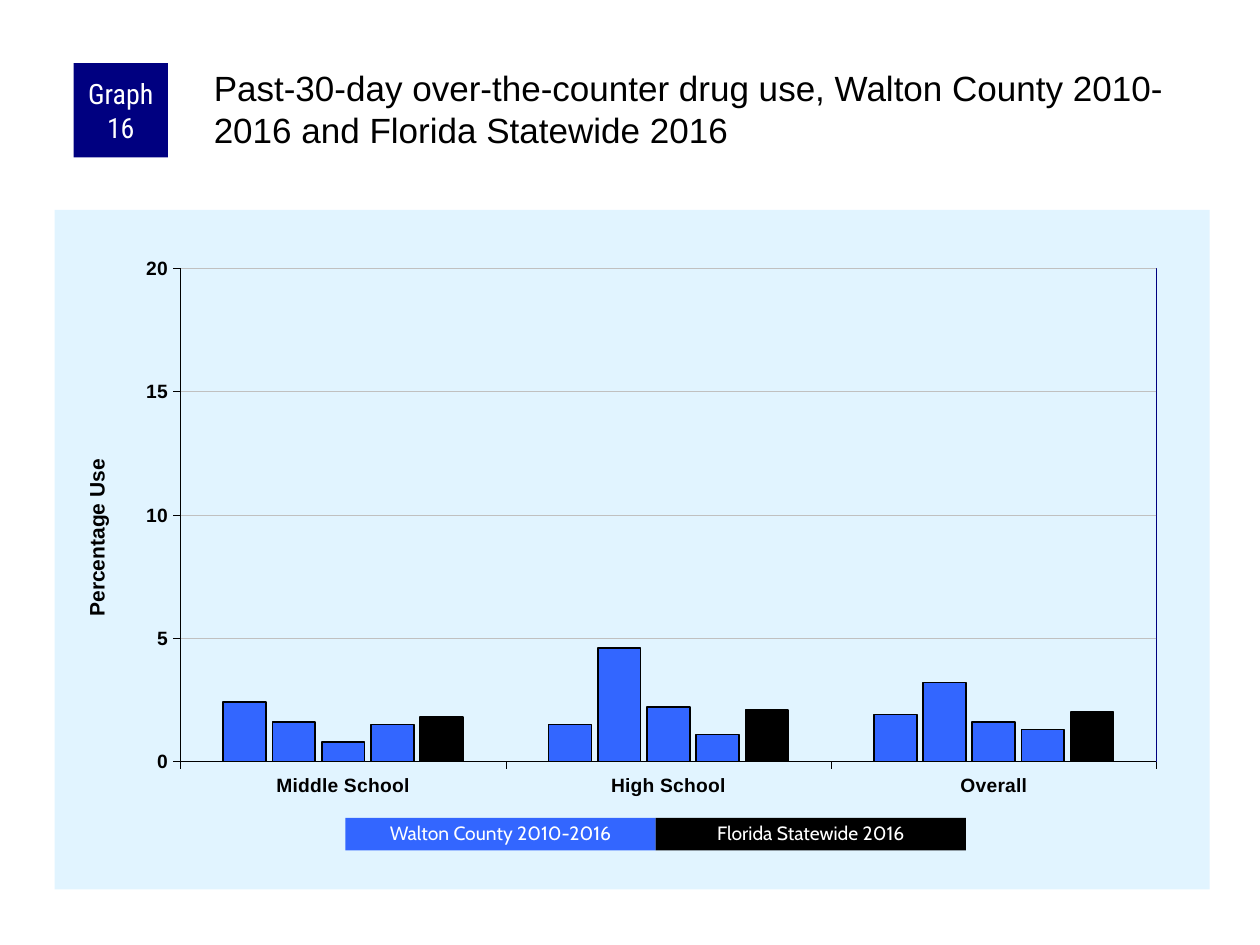
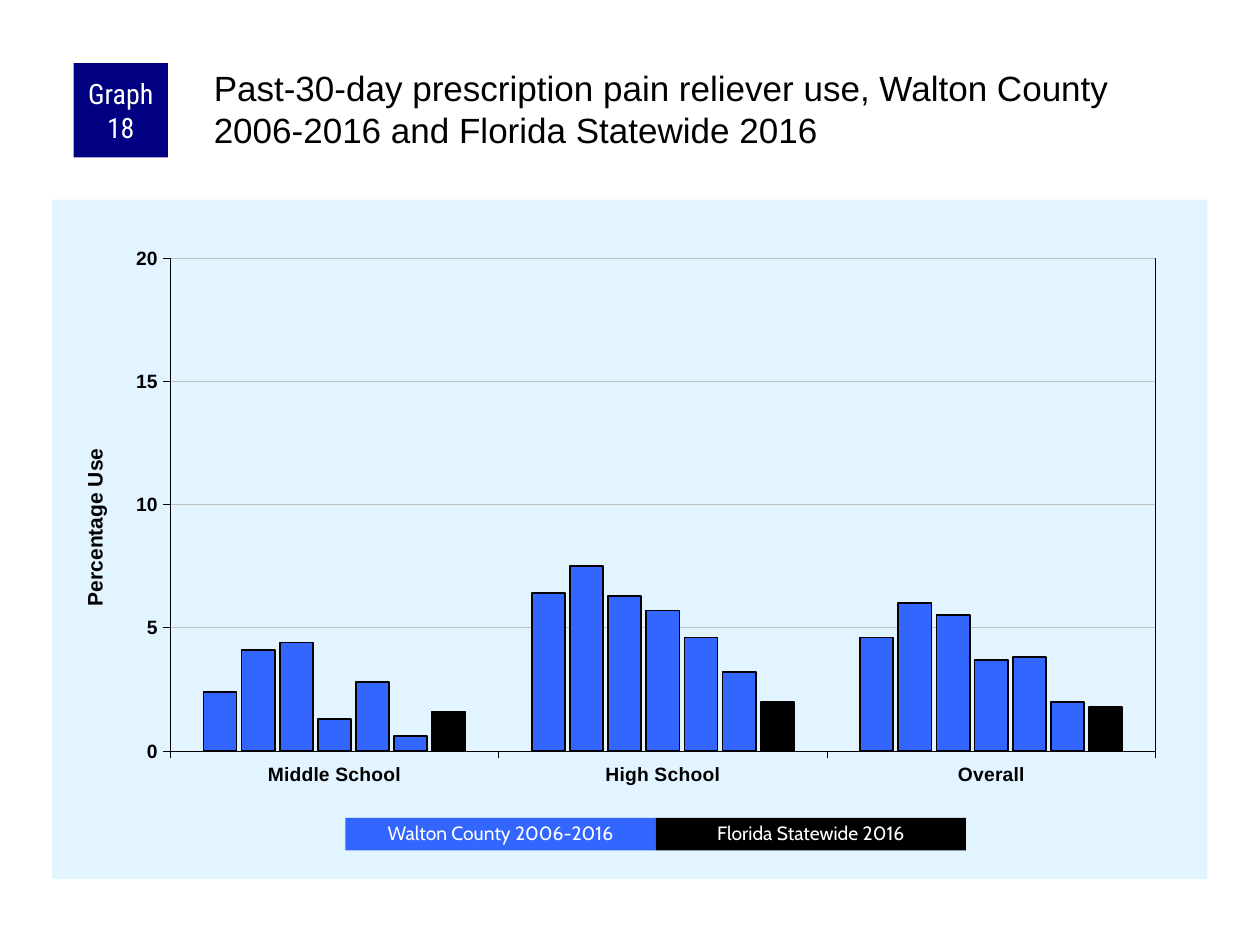
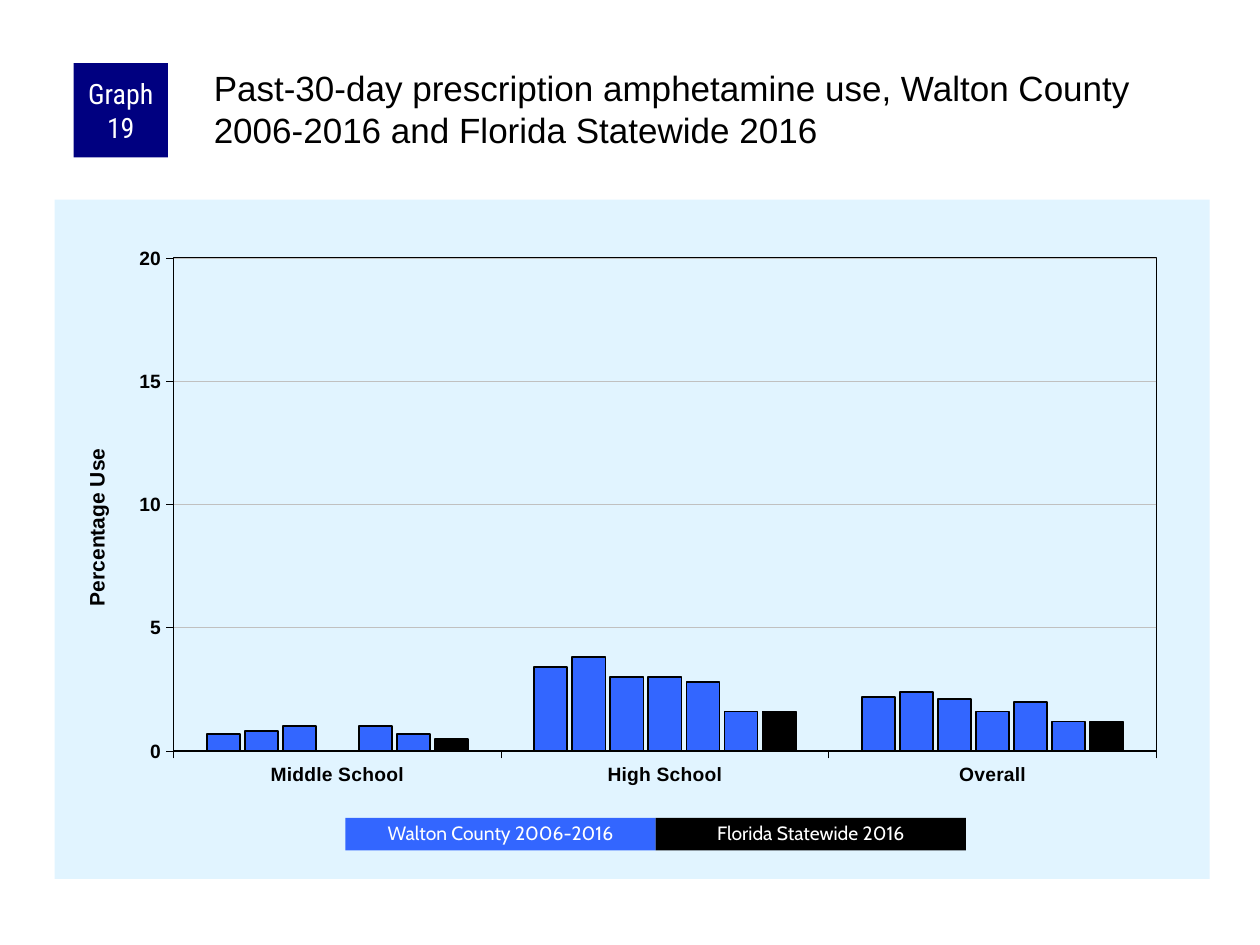
import lxml.etree
import pptx
import pptx.chart.data
import pptx.dml.color
import pptx.enum.chart
import pptx.enum.shapes
import pptx.enum.text
import pptx.oxml.ns
import pptx.util

# Grid of the 10 x 7.5 inch slide
COLS, ROWS = 120, 90
CELL = pptx.util.Inches(1 / 12)

COLORS = {"navy": "000080", "blue": "3366FF", "black": "000000",
          "white": "FFFFFF", "panel": "E1F4FF", "grid": "C0C0C0"}
CATEGORIES = ["Middle School", "High School", "Overall"]
STATEWIDE = "Florida Statewide 2016"

# Boxes as column, row, columns, rows
BADGE_BOX = (7, 6, 9, 9)
TITLE_BOX = (20, 6, 95, 10)
LEGEND_BOX = (32.9, 77.9, 59.1, 3.1)
CHART_SIZE = (110, 64.7)

BADGE_FONT = {"name": "Roboto Condensed", "size": 16, "color": COLORS["white"]}
TITLE_FONT = {"name": "Arial", "size": 20, "color": COLORS["black"]}
LEGEND_FONT = {"name": "Cabin", "size": 11, "color": COLORS["white"]}
CHART_FONT = {"name": "Arial", "size": 8, "color": COLORS["black"]}
AXIS_FONT = {**CHART_FONT, "size": 11, "bold": True}
AXIS_TITLE_FONT = {**AXIS_FONT, "size": 12}

# One row of values per survey year; the last row is the statewide figure
GRAPHS = [
    {"number": 16, "drug": "over-the-counter drug", "years": "2010-2016",
     "chart_at": (5.2, 20), "plot": (0.109, 0.845), "border": ("navy", 1),
     "values": [(2.4, 1.5, 1.9), (1.6, 4.6, 3.2), (0.8, 2.2, 1.6),
                (1.5, 1.1, 1.3), (1.8, 2.1, 2)]},
    {"number": 18, "drug": "prescription pain reliever", "years": "2006-2016",
     "chart_at": (5, 19), "plot": (0.102, 0.853), "border": ("black", 0.5),
     "values": [(2.4, 6.4, 4.6), (4.1, 7.5, 6), (4.4, 6.3, 5.5), (1.3, 5.7, 3.7),
                (2.8, 4.6, 3.8), (0.6, 3.2, 2), (1.6, 2, 1.8)]},
    {"number": 19, "drug": "prescription amphetamine", "years": "2006-2016",
     "chart_at": (5.2, 19), "plot": (0.103, 0.851), "border": ("black", 1),
     "values": [(0.7, 3.4, 2.2), (0.8, 3.8, 2.4), (1, 3, 2.1), (0, 3, 1.6),
                (1, 2.8, 2), (0.7, 1.6, 1.2), (0.5, 1.6, 1.2)]},
]


def rgb(color):
    return pptx.dml.color.RGBColor.from_string(color)


def to_emu(box):
    return [int(n * CELL) for n in box]


def style_font(font, formats):
    for name, value in formats.items():
        if name == "color":
            font.color.rgb = rgb(value)
        else:
            setattr(font, name, pptx.util.Pt(value) if name == "size" else value)


def style_line(line, color, width):
    line.color.rgb = rgb(color)
    line.width = pptx.util.Pt(width)


def write(sp, text, font, align, spacing=None, **frame):
    tf = sp.text_frame
    tf.word_wrap = True
    for name, value in frame.items():
        setattr(tf, name, value)
    p = tf.paragraphs[0]
    p.alignment = align
    p.line_spacing = spacing
    r = p.add_run()
    r.text = text
    style_font(r.font, font)


def add_label(slide, box, color, text, font, **frame):
    """Filled rectangle with centred text."""
    sp = slide.shapes.add_shape(pptx.enum.shapes.MSO_SHAPE.RECTANGLE, *to_emu(box))
    sp.shadow.inherit = False
    sp.fill.solid()
    sp.fill.fore_color.rgb = rgb(color)
    sp.line.fill.background()
    write(sp, text, font, pptx.enum.text.PP_ALIGN.CENTER,
          vertical_anchor=pptx.enum.text.MSO_ANCHOR.MIDDLE, **frame)


def add_header(slide, graph):
    # Badge with the graph number
    side = pptx.util.Inches(0.05)
    add_label(slide, BADGE_BOX, COLORS["navy"], f"Graph {graph['number']}", BADGE_FONT,
              margin_left=side, margin_right=side, margin_top=0, margin_bottom=0)
    # Title
    sp = slide.shapes.title
    sp.left, sp.top, sp.width, sp.height = to_emu(TITLE_BOX)
    inset = pptx.util.Inches(0.03)
    write(sp, f"Past-30-day {graph['drug']} use, Walton County {graph['years']} "
              f"and {STATEWIDE}",
          TITLE_FONT, pptx.enum.text.PP_ALIGN.LEFT, pptx.util.Pt(24),
          vertical_anchor=pptx.enum.text.MSO_ANCHOR.TOP,
          auto_size=pptx.enum.text.MSO_AUTO_SIZE.NONE,
          margin_left=inset, margin_top=inset, margin_right=0, margin_bottom=0)


def add_legend(slide, box, years):
    left, top, width, height = box
    half = width / 2
    entries = [("blue", f"Walton County {years}"), ("black", STATEWIDE)]
    for i, (color, text) in enumerate(entries):
        add_label(slide, (left + i * half, top, half, height), COLORS[color], text,
                  LEGEND_FONT, spacing=0.9)


def sub(parent, tag, **attrs):
    return lxml.etree.SubElement(parent, pptx.oxml.ns.qn(tag), attrs)


def make_layout(parent, **values):
    """Manual chart layout; values are shares of the chart area."""
    layout = sub(parent, "c:layout")
    manual = sub(layout, "c:manualLayout")
    if "w" in values:
        sub(manual, "c:layoutTarget", val="inner")
    for name in ("x", "y"):
        sub(manual, f"c:{name}Mode", val="edge")
    for name, value in values.items():
        sub(manual, f"c:{name}", val=str(value))
    return layout


def style_areas(chart, graph):
    """Panel fill, plot position and plot border."""
    root = chart.element
    sp_pr = sub(root, "c:spPr")
    sub(sub(sp_pr, "a:solidFill"), "a:srgbClr", val=COLORS["panel"])
    sub(sub(sp_pr, "a:ln"), "a:noFill")
    root.find(pptx.oxml.ns.qn("c:chart")).addnext(sp_pr)

    area = root.find(".//" + pptx.oxml.ns.qn("c:plotArea"))
    for old in area.findall(pptx.oxml.ns.qn("c:layout")):
        area.remove(old)
    x, w = graph["plot"]
    area.insert(0, make_layout(area, x=x, y=0.086, w=w, h=0.726))
    color, width = graph["border"]
    sp_pr = sub(area, "c:spPr")
    sub(sp_pr, "a:noFill")
    ln = sub(sp_pr, "a:ln", w=str(pptx.util.Pt(width)))
    sub(sub(ln, "a:solidFill"), "a:srgbClr", val=COLORS[color])


def style_axes(chart):
    marks = pptx.enum.chart.XL_TICK_MARK
    for axis in (chart.category_axis, chart.value_axis):
        axis.major_tick_mark = marks.OUTSIDE
        axis.minor_tick_mark = marks.NONE
        style_font(axis.tick_labels.font, AXIS_FONT)
        style_line(axis.format.line, COLORS["black"], 0.25)

    axis = chart.value_axis
    scale = {"minimum_scale": 0, "maximum_scale": 20, "major_unit": 5,
             "has_major_gridlines": True, "has_title": True}
    for name, value in scale.items():
        setattr(axis, name, value)
    style_line(axis.major_gridlines.format.line, COLORS["grid"], 0.25)

    # Axis title, set at the panel's left edge
    title = axis.axis_title
    r = title.text_frame.paragraphs[0].add_run()
    r.text = "Percentage Use"
    style_font(r.font, AXIS_TITLE_FONT)
    body = title.text_frame._txBody.find(pptx.oxml.ns.qn("a:bodyPr"))
    body.set("rot", "-5400000")
    body.set("vert", "horz")
    el = title._element
    for old in el.findall(pptx.oxml.ns.qn("c:layout")):
        el.remove(old)
    el.find(pptx.oxml.ns.qn("c:tx")).addnext(make_layout(el, x=0.022, y=0.361))


def add_use_chart(slide, box, graph):
    data = pptx.chart.data.CategoryChartData()
    data.categories = CATEGORIES
    for i, values in enumerate(graph["values"], 1):
        data.add_series(f"Series {i}", values)
    chart = slide.shapes.add_chart(
        pptx.enum.chart.XL_CHART_TYPE.COLUMN_CLUSTERED, *to_emu(box), data).chart
    chart.has_legend = False
    chart.has_title = False
    style_font(chart.font, CHART_FONT)

    plot = chart.plots[0]
    for name, value in {"gap_width": 200, "overlap": -15,
                        "vary_by_categories": False}.items():
        setattr(plot, name, value)
    # County years in blue, statewide in black
    last = len(graph["values"]) - 1
    for i, series in enumerate(plot.series):
        series.invert_if_negative = False
        series.format.fill.solid()
        series.format.fill.fore_color.rgb = rgb(COLORS["black" if i == last else "blue"])
        style_line(series.format.line, COLORS["black"], 1)
    style_axes(chart)
    style_areas(chart, graph)


def add_graph_slide(prs, graph):
    slide = prs.slides.add_slide(prs.slide_layouts.get_by_name("Title Only"))
    add_use_chart(slide, graph["chart_at"] + CHART_SIZE, graph)
    add_header(slide, graph)
    add_legend(slide, LEGEND_BOX, graph["years"])


def main():
    prs = pptx.Presentation()
    prs.slide_width, prs.slide_height = to_emu((COLS, ROWS))
    for graph in GRAPHS:
        add_graph_slide(prs, graph)
    prs.save("out.pptx")


if __name__ == "__main__":
    main()
